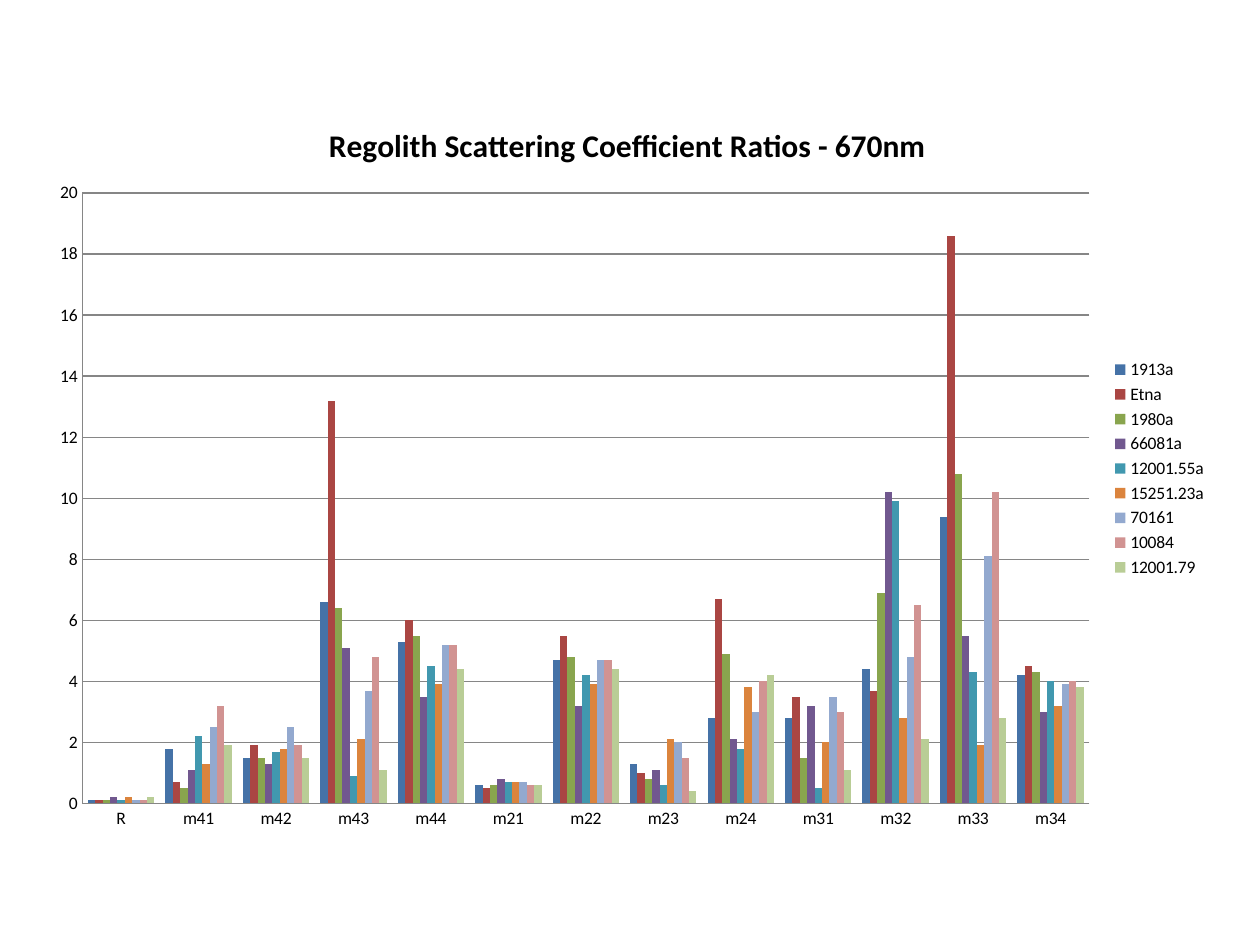
from lxml import etree
from pptx import Presentation
from pptx.chart.data import CategoryChartData
from pptx.dml.color import RGBColor
from pptx.enum.chart import XL_CHART_TYPE as ChartType
from pptx.enum.chart import XL_LEGEND_POSITION as LegendPosition
from pptx.enum.chart import XL_TICK_MARK as TickMark
from pptx.oxml.ns import qn
from pptx.util import Pt

TITLE = "Regolith Scattering Coefficient Ratios - 670nm"
CATEGORIES = ["R", "m41", "m42", "m43", "m44", "m21", "m22", "m23", "m24",
              "m31", "m32", "m33", "m34"]
SAMPLES = [
    ("1913a", "4572A7", [0.1, 1.8, 1.5, 6.6, 5.3, 0.6, 4.7, 1.3, 2.8, 2.8, 4.4, 9.4, 4.2]),
    ("Etna", "AA4643", [0.1, 0.7, 1.9, 13.2, 6, 0.5, 5.5, 1, 6.7, 3.5, 3.7, 18.6, 4.5]),
    ("1980a", "89A54E", [0.1, 0.5, 1.5, 6.4, 5.5, 0.6, 4.8, 0.8, 4.9, 1.5, 6.9, 10.8, 4.3]),
    ("66081a", "71588F", [0.2, 1.1, 1.3, 5.1, 3.5, 0.8, 3.2, 1.1, 2.1, 3.2, 10.2, 5.5, 3]),
    ("12001.55a", "4198AF", [0.1, 2.2, 1.7, 0.9, 4.5, 0.7, 4.2, 0.6, 1.8, 0.5, 9.9, 4.3, 4]),
    ("15251.23a", "DB843D", [0.2, 1.3, 1.8, 2.1, 3.9, 0.7, 3.9, 2.1, 3.8, 2, 2.8, 1.9, 3.2]),
    ("70161", "93A9CF", [0.1, 2.5, 2.5, 3.7, 5.2, 0.7, 4.7, 2, 3, 3.5, 4.8, 8.1, 3.9]),
    ("10084", "D19392", [0.1, 3.2, 1.9, 4.8, 5.2, 0.6, 4.7, 1.5, 4, 3, 6.5, 10.2, 4]),
    ("12001.79", "B9CD96", [0.2, 1.9, 1.5, 1.1, 4.4, 0.6, 4.4, 0.4, 4.2, 1.1, 2.1, 2.8, 3.8]),
]
PLOT_AREA = {"x": 0.04, "y": 0.13, "w": 0.85, "h": 0.82}


def color(hex_string):
    return RGBColor.from_string(hex_string)


def set_values(target, values):
    for name, value in values.items():
        setattr(target, name, value)


def style_font(font, size, bold=False):
    set_values(font, {"name": "Calibri", "size": Pt(size), "bold": bold})
    font.color.rgb = color("000000")


def style_line(line):
    line.width = Pt(0.75)
    line.color.rgb = color("868686")


def place_plot_area(chart, fractions):
    """Fix the inner plot area as fractions of the chart frame."""
    plot_area = chart.element.find(".//" + qn("c:plotArea"))
    for old in plot_area.findall(qn("c:layout")):
        plot_area.remove(old)
    layout = etree.Element(qn("c:layout"))
    manual = etree.SubElement(layout, qn("c:manualLayout"))
    settings = {"layoutTarget": "inner", "xMode": "edge", "yMode": "edge", **fractions}
    for name, value in settings.items():
        etree.SubElement(manual, qn("c:" + name)).set("val", str(value))
    plot_area.insert(0, layout)


def add_ratio_chart(page):
    data = CategoryChartData(number_format="General")
    data.categories = CATEGORIES
    for name, _, values in SAMPLES:
        data.add_series(name, values)
    chart = page.shapes.add_chart(ChartType.COLUMN_CLUSTERED, Pt(20), Pt(55),
                                  Pt(677), Pt(425.5), data).chart
    style_font(chart.font, 10)
    place_plot_area(chart, PLOT_AREA)
    set_values(chart.plots[0], {"gap_width": 150, "overlap": 0, "vary_by_categories": False})
    for series, (_, fill, _) in zip(chart.plots[0].series, SAMPLES):
        series.format.fill.solid()
        series.format.fill.fore_color.rgb = color(fill)
    return chart


def add_title(chart):
    chart.has_title = True
    para = chart.chart_title.text_frame.paragraphs[0]
    span = para.add_run()
    span.text = TITLE
    style_font(span.font, 18, bold=True)
    chart.chart_title.include_in_layout = False


def add_legend(chart):
    chart.has_legend = True
    set_values(chart.legend, {"position": LegendPosition.RIGHT, "include_in_layout": False})
    style_font(chart.legend.font, 10)


def style_axes(chart):
    for axis in (chart.category_axis, chart.value_axis):
        set_values(axis, {"major_tick_mark": TickMark.NONE, "minor_tick_mark": TickMark.NONE})
        style_font(axis.tick_labels.font, 10)
        style_line(axis.format.line)
    set_values(chart.value_axis, {"minimum_scale": 0, "maximum_scale": 20,
                                  "major_unit": 2, "has_major_gridlines": True})
    style_line(chart.value_axis.major_gridlines.format.line)


def main():
    deck = Presentation()
    set_values(deck, {"slide_width": Pt(720), "slide_height": Pt(540)})
    page = deck.slides.add_slide(deck.slide_layouts[6])
    chart = add_ratio_chart(page)
    add_title(chart)
    add_legend(chart)
    style_axes(chart)
    deck.save("out.pptx")


if __name__ == "__main__":
    main()
